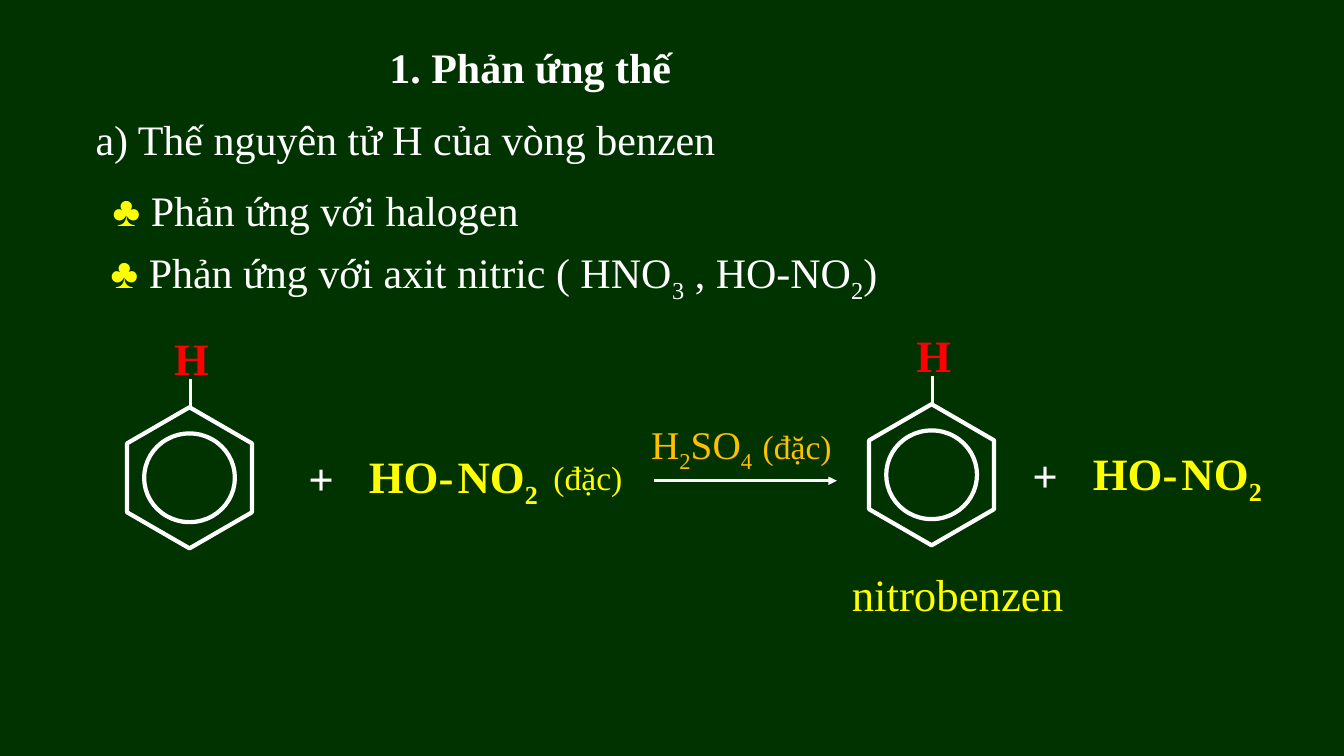
from dataclasses import dataclass

from lxml import etree
from pptx import Presentation
from pptx.dml.color import RGBColor
from pptx.enum.shapes import MSO_CONNECTOR, MSO_SHAPE
from pptx.enum.text import MSO_ANCHOR, MSO_AUTO_SIZE, PP_ALIGN
from pptx.oxml.ns import qn
from pptx.util import Inches, Pt

HEX, OVAL = MSO_SHAPE.HEXAGON, MSO_SHAPE.OVAL
LINE = MSO_CONNECTOR.STRAIGHT
TOP, LEFT = MSO_ANCHOR.TOP, PP_ALIGN.LEFT
FIXED = MSO_AUTO_SIZE.NONE


@dataclass(frozen=True)
class Theme:
    """Colours, font and type sizes of the slide."""
    font: str = "Times New Roman"
    back: str = "003300"
    white: str = "FFFFFF"
    yellow: str = "FFFF00"
    red: str = "FF0000"
    gold: str = "FFC000"
    body: int = 30
    large: int = 32
    agent: int = 28
    small: int = 24
    bond: int = 2
    ring: int = 3


THEME = Theme()


def tint(hue):
    """Turn a hex string into a colour."""
    return RGBColor.from_string(hue)


def style(run, hue, size, bold=False, sub=False):
    """Format one run, lowered if it is a subscript."""
    font = run.font
    font.name, font.size, font.bold = THEME.font, Pt(size), bold
    font.color.rgb = tint(hue)
    if sub:
        run._r.get_or_add_rPr().set("baseline", "-25000")


def frame(shape):
    """Give a text shape a fixed, wrapped, top-left layout."""
    text = shape.text_frame
    text.auto_size, text.word_wrap = FIXED, True
    text.vertical_anchor = TOP
    text.paragraphs[0].alignment = LEFT
    return text


def label(slide, box, parts, bold=False):
    """Place one line made of (text, colour, size) parts; '_' opens a subscript."""
    shape = slide.shapes.add_textbox(*map(Inches, box))
    line = frame(shape).paragraphs[0]
    for words, hue, size in parts:
        run = line.add_run()
        run.text = words.removeprefix("_")
        style(run, hue, size, bold, words.startswith("_"))


def stroke(slide, start, end, arrow=False):
    """Draw a white line, with an arrowhead if asked."""
    link = slide.shapes.add_connector(LINE, *map(Inches, start + end))
    link.line.color.rgb = tint(THEME.white)
    link.line.width = Pt(THEME.bond)
    if arrow:
        tail = etree.SubElement(link.line._get_or_add_ln(), qn("a:tailEnd"))
        tail.set("type", "triangle")
    etree.SubElement(link._element.spPr, qn("a:effectLst"))


def ring(slide, x, y):
    """Draw a benzene ring with its H atom, the ring centred on x, y."""
    group = slide.shapes.add_group_shape()
    for kind, wide, high in ((HEX, 1.4, 1.24), (OVAL, 0.9, 0.88)):
        box = (x - wide / 2, y - high / 2, wide, high)
        part = group.shapes.add_shape(kind, *map(Inches, box))
        part.fill.background()
        part.line.color.rgb = tint(THEME.white)
        part.line.width = Pt(THEME.ring)
        part.shadow.inherit = False
        if kind == HEX:
            part.rotation = 270
            part.adjustments[0] = 0.289
    stroke(slide, (x + 0.01, y - 0.98), (x + 0.01, y - 0.69))
    label(slide, (x - 0.25, y - 1.51, 0.6, 0.64),
          [("H", THEME.red, THEME.large)], True)


def nitric(slide, x, y):
    """Write the plus sign and nitric acid from x, y."""
    hue, size = THEME.yellow, THEME.large
    label(slide, (x, y + 0.02, 0.66, 0.64), [("+", THEME.white, size)], True)
    label(slide, (x + 0.6, y, 1.1, 0.64), [("HO-", hue, size)], True)
    label(slide, (x + 1.48, y, 1.1, 0.64),
          [("NO", hue, size), ("_2", hue, size)], True)


def heads(slide, top):
    """Set the title and the three lines below it."""
    size, club = THEME.body, ("♣ ", THEME.yellow, THEME.body)
    title = slide.shapes.title
    title.left, title.top, title.width, title.height = map(
        Inches, (0.66, top, 9.2, 0.61))
    text = frame(title)
    text.text = "1. Phản ứng thế"
    style(text.paragraphs[0].runs[0], THEME.white, size, True)
    acid = ("Phản ứng với axit nitric ( HNO", "_3", " , HO-NO", "_2", ")")
    lines = (
        (0.85, 0.72, [("a) Thế nguyên tử H của vòng benzen", THEME.white, size)]),
        (1.02, 1.42, [club, ("Phản ứng với halogen", THEME.white, size)]),
        (1, 2.04, [club] + [(words, THEME.white, size) for words in acid]),
    )
    for x, drop, parts in lines:
        label(slide, (x, top + drop, 9.2, 0.61), parts)


def react(slide, y):
    """Lay out the reaction along the line y."""
    ring(slide, 1.88, y)
    nitric(slide, 2.96, y - 0.34)
    label(slide, (5.39, y - 0.26, 1.01, 0.5),
          [("(đặc)", THEME.yellow, THEME.small)])
    agent = [(words, THEME.gold, THEME.agent) for words in ("H", "_2", "SO", "_4")]
    agent += [(" ", THEME.gold, THEME.body), ("(đặc)", THEME.gold, THEME.small)]
    label(slide, (6.36, y - 0.65, 2.1, 0.61), agent)
    stroke(slide, (6.49, y + 0.03), (8.3, y + 0.03), True)
    ring(slide, 9.24, y - 0.03)
    nitric(slide, 10.14, y - 0.37)
    label(slide, (8.35, y + 0.83, 2.4, 0.64),
          [("nitrobenzen", THEME.yellow, THEME.large)])


def main():
    """Build and save the slide."""
    deck = Presentation()
    deck.slide_width, deck.slide_height = Inches(13.33), Inches(7.5)
    slide = deck.slides.add_slide(deck.slide_layouts[5])
    fill = slide.background.fill
    fill.solid()
    fill.fore_color.rgb = tint(THEME.back)
    heads(slide, 0.36)
    react(slide, 4.74)
    deck.save("out.pptx")


if __name__ == "__main__":
    main()
